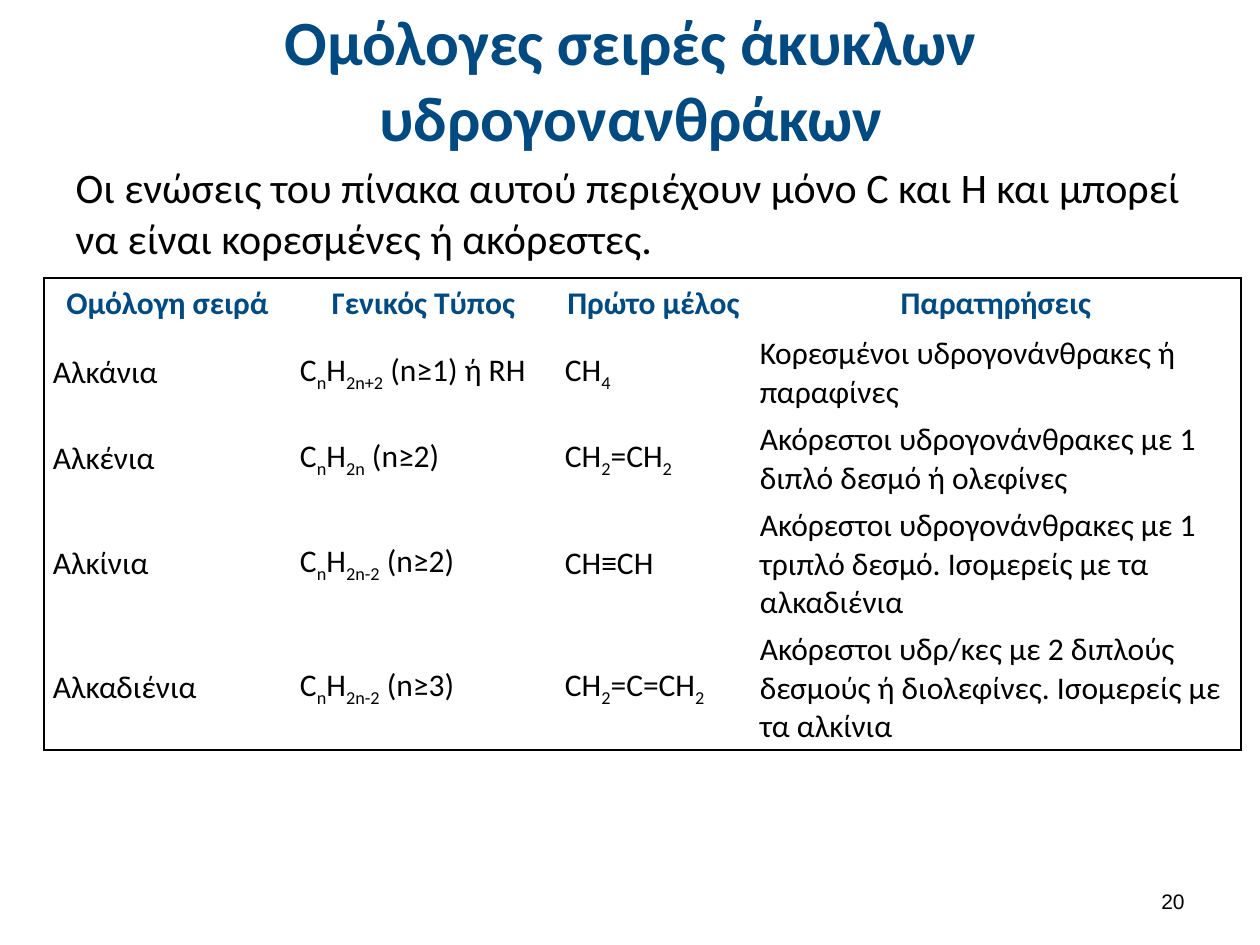
from dataclasses import dataclass

from lxml.etree import SubElement
from pptx import Presentation
from pptx.dml.color import RGBColor
from pptx.enum.text import MSO_ANCHOR as Anchor, MSO_AUTO_SIZE as AutoSize, PP_ALIGN as Align
from pptx.oxml.ns import qn
from pptx.util import Emu, Pt

SCALE = 914400 // 126


@dataclass(frozen=True)
class Theme:
    accent: str = "004A82"
    ink: str = "000000"
    font: str = "Calibri"
    number_font: str = "Arial"
    title: int = 36
    body: int = 24
    cell: int = 18
    number: int = 12
    border: int = 1


THEME = Theme()
COLUMNS = [247, 265, 195, 490]
ROWS = [52, 86, 86, 124, 124]
HEADER = ["Ομόλογη σειρά", "Γενικός Τύπος", "Πρώτο μέλος", "Παρατηρήσεις"]
SERIES = [
    ["Αλκάνια", "C|n|H|2n+2| (n≥1) ή RH", "CH|4",
     "Κορεσμένοι υδρογονάνθρακες ή παραφίνες"],
    ["Αλκένια", "C|n|H|2n| (n≥2)", "CH|2|=CH|2",
     "Ακόρεστοι υδρογονάνθρακες με 1 διπλό δεσμό ή ολεφίνες"],
    ["Αλκίνια", "C|n|H|2n-2| (n≥2)", "CH≡CH",
     "Ακόρεστοι υδρογονάνθρακες με 1 τριπλό δεσμό. Ισομερείς με τα αλκαδιένια"],
    ["Αλκαδιένια", "C|n|H|2n-2| (n≥3)", "CH|2|=C=CH|2",
     "Ακόρεστοι υδρ/κες με 2 διπλούς δεσμούς ή διολεφίνες. Ισομερείς με τα αλκίνια"],
]


def px(length):
    return Emu(length * SCALE)


def place(shape, box):
    shape.left, shape.top, shape.width, shape.height = map(px, box)


def style(para, size, color=THEME.ink, bold=False, name=THEME.font, align=Align.LEFT):
    para.alignment = align
    font = para.font
    font.name, font.size, font.bold = name, Pt(size), bold
    font.color.rgb = RGBColor.from_string(color)


def add_title(page, box):
    title = page.shapes.title
    place(title, box)
    frame = title.text_frame
    frame.text = "Ομόλογες σειρές άκυκλων υδρογονανθράκων"
    frame.auto_size = AutoSize.NONE
    frame.vertical_anchor = Anchor.MIDDLE
    style(frame.paragraphs[0], THEME.title, THEME.accent, True, align=Align.CENTER)


def add_body(page, box):
    body = page.placeholders[1]
    place(body, box)
    frame = body.text_frame
    frame.text = ("Οι ενώσεις του πίνακα αυτού περιέχουν μόνο C και H "
                  "και μπορεί να είναι κορεσμένες ή ακόρεστες.")
    frame.auto_size = AutoSize.NONE
    para = frame.paragraphs[0]
    para.line_spacing = 1.02
    para.space_before = Pt(0)
    properties = para._p.get_or_add_pPr()
    properties.set("marL", "0")
    properties.set("indent", "0")
    SubElement(properties, qn("a:buNone"))
    style(para, THEME.body)


def add_number(page, box):
    number = page.shapes.add_textbox(*map(px, box))
    frame = number.text_frame
    frame.word_wrap = True
    frame.vertical_anchor = Anchor.MIDDLE
    frame.text = "20"
    style(frame.paragraphs[0], THEME.number, name=THEME.number_font, align=Align.RIGHT)


def write_formula(para, formula):
    for index, part in enumerate(formula.split("|")):
        span = para.add_run()
        span.text = part
        if index % 2:
            span._r.get_or_add_rPr().set("baseline", "-25000")


def set_borders(cell, sides):
    properties = cell._tc.get_or_add_tcPr()
    for index, side in enumerate("LRTB"):
        line = SubElement(properties, qn(f"a:ln{side}"), w=str(Pt(THEME.border)))
        if side in sides:
            fill = SubElement(line, qn("a:solidFill"))
            SubElement(fill, qn("a:srgbClr"), val=THEME.ink)
        else:
            SubElement(line, qn("a:noFill"))
        properties.insert(index, line)


def outer_sides(row, column):
    edges = {"L": column == 0, "R": column == len(COLUMNS) - 1,
             "T": row == 0, "B": row == len(ROWS) - 1}
    return [side for side, on_edge in edges.items() if on_edge]


def add_series_table(page, left, top):
    box = (left, top, sum(COLUMNS), sum(ROWS))
    table = page.shapes.add_table(len(ROWS), len(COLUMNS), *map(px, box)).table
    table.first_row = table.horz_banding = False
    for column, width in zip(table.columns, COLUMNS):
        column.width = px(width)
    for row, height in zip(table.rows, ROWS):
        row.height = px(height)
    for row, texts in enumerate([HEADER, *SERIES]):
        for column, text in enumerate(texts):
            cell = table.cell(row, column)
            cell.margin_left = cell.margin_right = px(9)
            cell.margin_top = cell.margin_bottom = px(5)
            cell.vertical_anchor = Anchor.MIDDLE
            cell.fill.background()
            set_borders(cell, outer_sides(row, column))
            para = cell.text_frame.paragraphs[0]
            write_formula(para, text)
            if row == 0:
                style(para, THEME.cell, THEME.accent, True, align=Align.CENTER)
            else:
                style(para, THEME.cell)


def main():
    deck = Presentation()
    deck.slide_width, deck.slide_height = px(1260), px(945)
    page = deck.slides.add_slide(deck.slide_layouts[1])
    add_title(page, (64, 16, 1134, 125))
    add_body(page, (63, 154, 1134, 120))
    add_number(page, (903, 876, 294, 50))
    add_series_table(page, 44, 278)
    deck.save("out.pptx")


if __name__ == "__main__":
    main()
